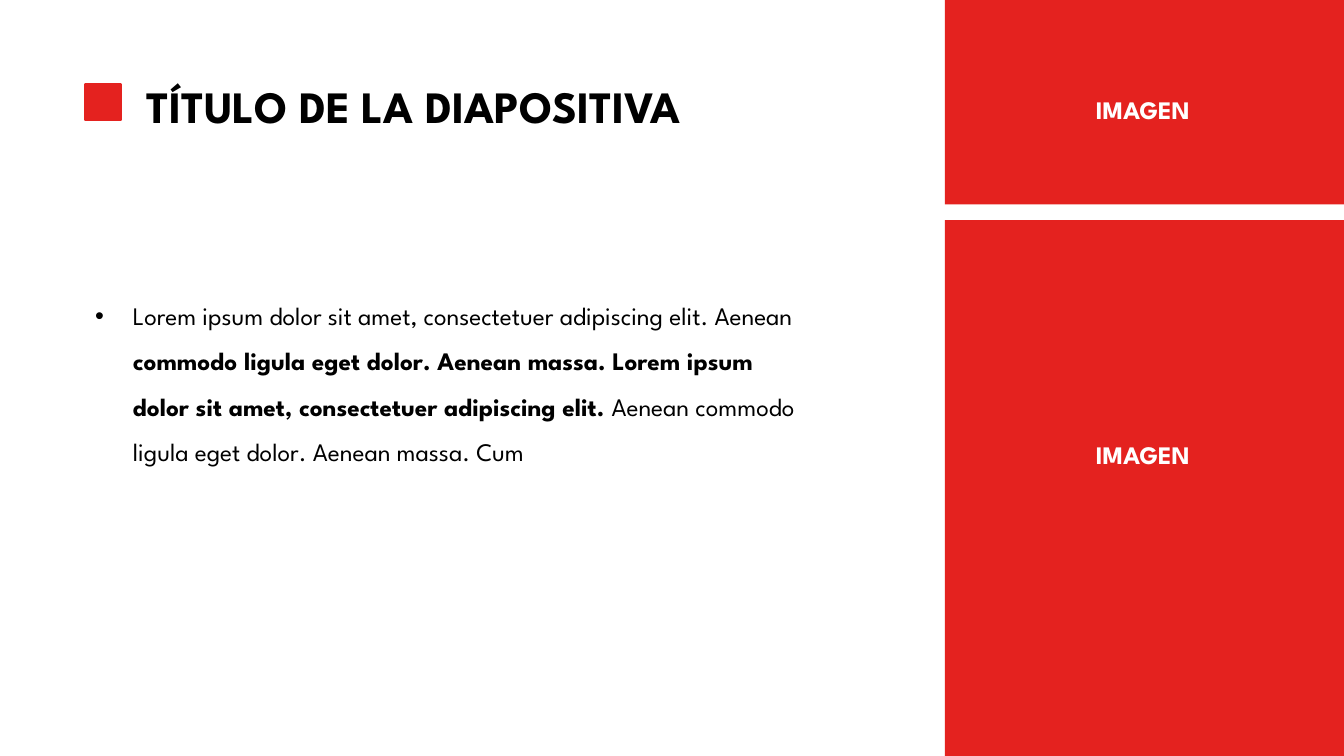
from dataclasses import dataclass

from lxml import etree
from pptx import Presentation
from pptx import util as u
from pptx.dml.color import RGBColor
from pptx.enum import shapes, text
from pptx.oxml import ns


@dataclass(frozen=True)
class Theme:
    font: str = "League Spartan"
    red: RGBColor = RGBColor(0xE4, 0x22, 0x1F)
    black: RGBColor = RGBColor(0, 0, 0)
    white: RGBColor = RGBColor(255, 255, 255)
    title_size: int = 32
    body_size: int = 18


THEME = Theme()
SLIDE_W, SLIDE_H = 33.87, 19.05


def add_rect(s, x, y, w, h):
    """Red rectangle without outline; lengths in cm."""
    sp = s.shapes.add_shape(shapes.MSO_SHAPE.RECTANGLE,
                            u.Cm(x), u.Cm(y), u.Cm(w), u.Cm(h))
    sp.shadow.inherit = False
    sp.fill.solid()
    sp.fill.fore_color.rgb = THEME.red
    sp.line.fill.background()
    return sp


def add_text(s, x, y, w, h, runs, size, color):
    """Text box with one paragraph of (text, bold) runs; lengths in cm."""
    sp = s.shapes.add_textbox(u.Cm(x), u.Cm(y), u.Cm(w), u.Cm(h))
    tf = sp.text_frame
    tf.word_wrap = True
    tf.auto_size = text.MSO_AUTO_SIZE.SHAPE_TO_FIT_TEXT
    p = tf.paragraphs[0]
    for words, bold in runs:
        r = p.add_run()
        r.text = words
        r.font.name = THEME.font
        r.font.size = u.Pt(size)
        r.font.bold = bold
        r.font.color.rgb = color
    return p


def add_heading(s, x, y, w, h):
    # Square marker, then the title
    side = 0.89
    marker = add_rect(s, x, y + 0.28, side, side)
    marker.line.color.rgb = THEME.red
    marker.line.width = u.Pt(1.5)
    indent = 1.3
    add_text(s, x + indent, y, w - indent, h,
             [("TÍTULO DE LA DIAPOSITIVA", True)], THEME.title_size, THEME.black)


def add_body(s, x, y, w, h):
    p = add_text(s, x, y, w, h, [
        ("Lorem ipsum dolor sit amet, consectetuer adipiscing elit. Aenean ", False),
        ("commodo ligula eget dolor. Aenean massa. Lorem ipsum dolor sit amet, "
         "consectetuer adipiscing elit. ", True),
        ("Aenean commodo ligula eget dolor. Aenean massa. Cum", False),
    ], THEME.body_size, THEME.black)
    p.line_spacing = 1.5
    # Bullet with hanging indent
    hang = u.Cm(0.95)
    pPr = p._p.get_or_add_pPr()
    pPr.set("marL", str(hang))
    pPr.set("indent", str(-hang))
    etree.SubElement(pPr, ns.qn("a:buFont")).set("typeface", "Arial")
    etree.SubElement(pPr, ns.qn("a:buChar")).set("char", "•")


def add_image_panel(s, x, y, w, h, label_top):
    add_rect(s, x, y, w, h)
    add_text(s, x + 3.56, y + label_top, 3.94, 1.02,
             [("IMAGEN", True)], THEME.body_size, THEME.white)


def main():
    prs = Presentation()
    prs.slide_width, prs.slide_height = u.Cm(SLIDE_W), u.Cm(SLIDE_H)
    s = prs.slides.add_slide(prs.slide_layouts[6])

    # Left column
    left = 2.15
    add_heading(s, left, 1.85, 24.26, 1.63)
    add_body(s, left, 7.06, 18.29, 4.78)

    # Right column: two image areas split by a gap
    panel_x, top_h, gap = 23.81, 5.15, 0.4
    panel_w = SLIDE_W - panel_x
    low_y = top_h + gap
    add_image_panel(s, panel_x, low_y, panel_w, SLIDE_H - low_y, 5.4)
    add_image_panel(s, panel_x, 0, panel_w, top_h, 2.26)

    prs.save("out.pptx")


if __name__ == "__main__":
    main()
